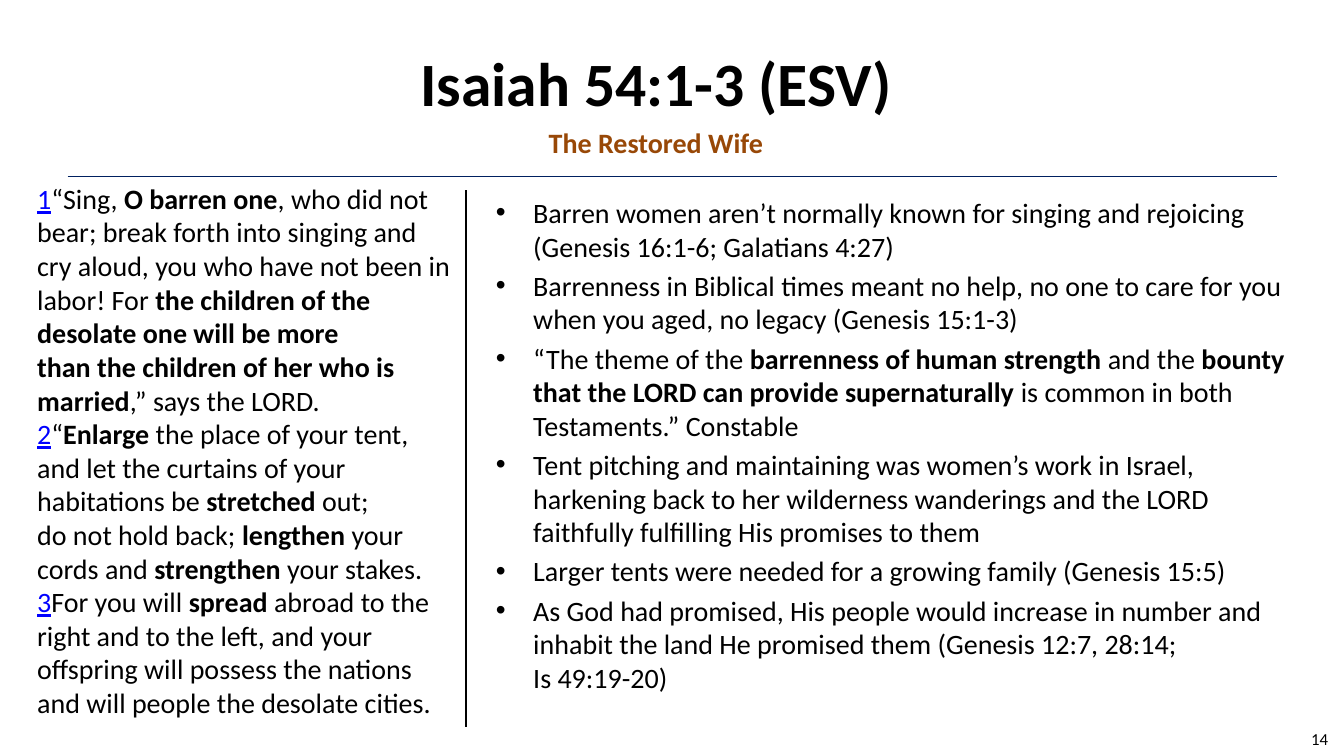
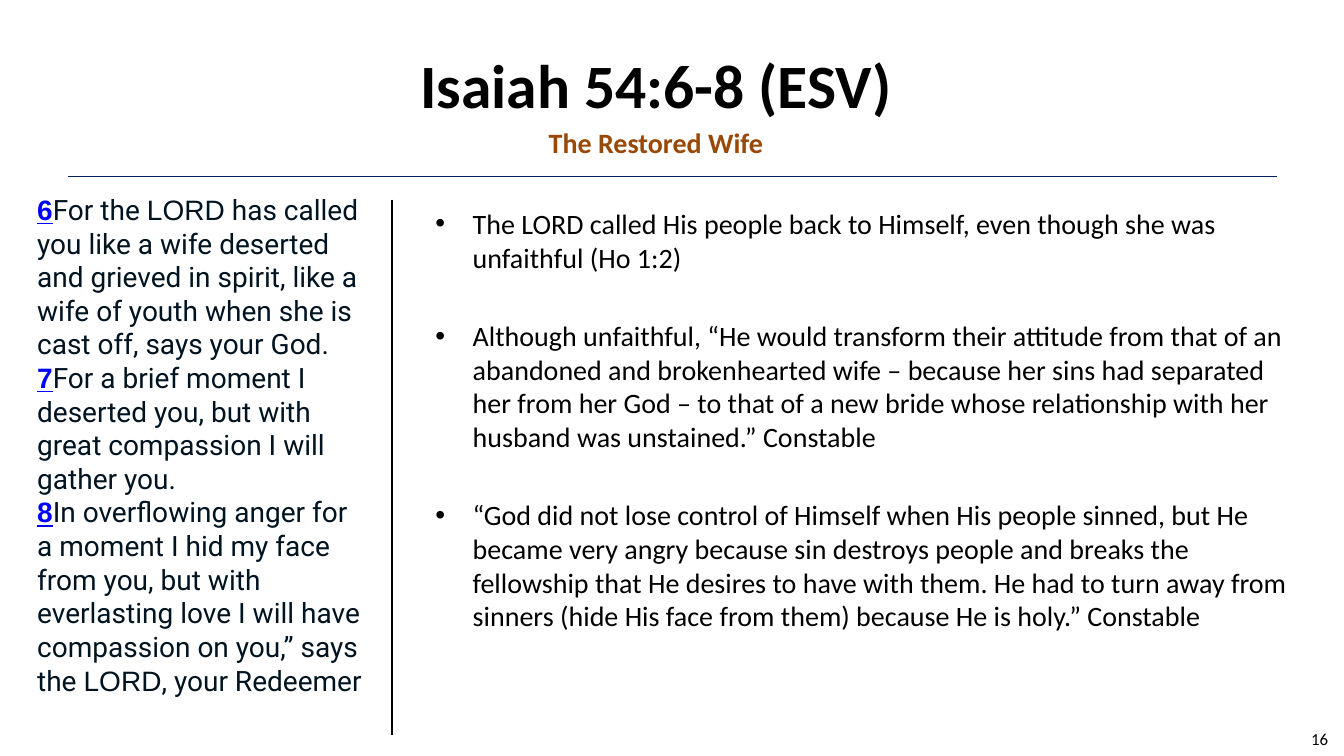
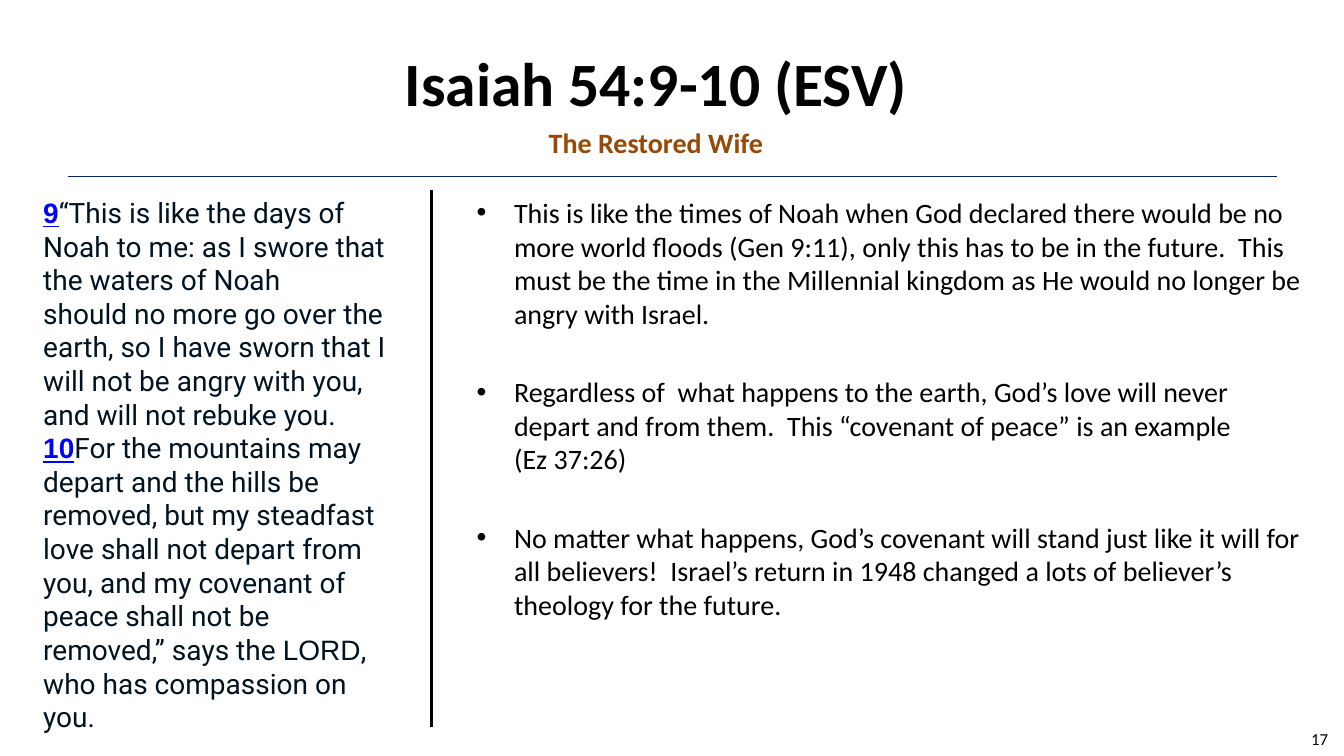
from dataclasses import dataclass
from typing import NamedTuple

from lxml.etree import SubElement
from pptx import Presentation
from pptx.dml.color import RGBColor
from pptx.enum.shapes import MSO_CONNECTOR as Link
from pptx.enum.text import MSO_ANCHOR as Anchor, MSO_AUTO_SIZE as Fit, PP_ALIGN as Align
from pptx.oxml.ns import qn
from pptx.util import Inches, Pt


# Theme
@dataclass(frozen=True)
class Look:
    font: str
    size: int
    color: str
    bold: bool = False
    under: bool = False


@dataclass(frozen=True)
class Theme:
    title: Look = Look("Calibri", 44, "000000", bold=True)
    sub: Look = Look("Calibri", 20, "984807", bold=True)
    text: Look = Look("Calibri", 20, "000000")
    strong: Look = Look("Calibri", 20, "000000", bold=True)
    mark: Look = Look("Calibri", 20, "0000FF", under=True)
    verse: Look = Look("Roboto", 20, "001320")
    name: Look = Look("Arial", 20, "001320")
    label: Look = Look("Arial", 20, "0000FF", bold=True, under=True)
    foot: Look = Look("Calibri", 12, "000000")
    rule: str = "002060"
    split: str = "000000"
    indent: float = 0.37


THEME = Theme()


# Content model
class Frame(NamedTuple):
    left: float
    top: float
    width: float
    height: float


class Verse(NamedTuple):
    num: str
    text: str  # asterisks enclose the accented words


class Voice(NamedTuple):
    num: Look
    text: Look
    accent: Look


class Line(NamedTuple):
    x1: float
    y1: float
    x2: float
    y2: float


@dataclass(frozen=True)
class Page:
    title: str
    top: float
    number: str
    voice: Voice
    verses: list[Verse]
    left: Frame
    split: Line
    points: list[str]
    right: Frame
    gap: int  # points between bullets


PLAIN = Voice(THEME.mark, THEME.text, THEME.strong)
WEB = Voice(THEME.label, THEME.verse, THEME.name)

PAGES = [
    Page(
        "Isaiah 54:1-3 (ESV)", 0.19, "14", PLAIN,
        [
            Verse("1", "“Sing, *O barren one*, who did not bear; break forth into singing and "
                  "cry aloud, you who have not been in labor! For *the children of the "
                  "desolate one will be more\nthan the children of her who is married*,” "
                  "says the LORD."),
            Verse("2", "“*Enlarge* the place of your tent,\nand let the curtains of your "
                  "habitations be *stretched* out;\ndo not hold back; *lengthen* your cords "
                  "and *strengthen* your stakes."),
            Verse("3", "For you will *spread* abroad to the right and to the left, and your "
                  "offspring will possess the nations and will people the desolate cities."),
        ],
        Frame(0.27, 1.75, 4.35, 5.69), Line(4.62, 1.89, 4.62, 7.21),
        [
            "Barren women aren’t normally known for singing and rejoicing "
            "(Genesis 16:1-6; Galatians 4:27)",
            "Barrenness in Biblical times meant no help, no one to care for you when you "
            "aged, no legacy (Genesis 15:1-3)",
            "“The theme of the *barrenness of human strength *and the *bounty that the LORD "
            "can provide supernaturally* is common in both Testaments.” Constable",
            "Tent pitching and maintaining was women’s work in Israel, harkening back to her "
            "wilderness wanderings and the LORD faithfully fulfilling His promises to them",
            "Larger tents were needed for a growing family (Genesis 15:5)",
            "As God had promised, His people would increase in number and inhabit the land "
            "He promised them (Genesis 12:7, 28:14;\nIs 49:19-20)",
        ],
        Frame(4.82, 1.89, 8.25, 5.54), 4,
    ),
    Page(
        "Isaiah 54:6-8 (ESV)", 0.21, "16", WEB,
        [
            Verse("6", "For the *LORD* has called you like a wife deserted and grieved in "
                  "spirit, like a wife of youth when she is cast off, says your God."),
            Verse("7", "For a brief moment I deserted you, but with great compassion I will "
                  "gather you."),
            Verse("8", "In overflowing anger for a moment I hid my face from you, but with "
                  "everlasting love I will have compassion on you,” says the *LORD*, your "
                  "Redeemer"),
        ],
        Frame(0.27, 1.86, 3.42, 5.58), Line(3.89, 1.98, 3.89, 7.29),
        [
            "The LORD called His people back to Himself, even though she was unfaithful "
            "(Ho 1:2)",
            "Although unfaithful, “He would transform their attitude from that of an "
            "abandoned and brokenhearted wife – because her sins had separated her from her "
            "God – to that of a new bride whose relationship with her husband was "
            "unstained.” Constable",
            "“God did not lose control of Himself when His people sinned, but He became very "
            "angry because sin destroys people and breaks the fellowship that He desires to "
            "have with them. He had to turn away from sinners (hide His face from them) "
            "because He is holy.” Constable",
        ],
        Frame(4.22, 2, 8.66, 5.29), 32,
    ),
    Page(
        "Isaiah 54:9-10 (ESV)", 0.19, "17", WEB,
        [
            Verse("9", "“This is like the days of Noah to me: as I swore that the waters of "
                  "Noah\nshould no more go over the earth, so I have sworn that I will not "
                  "be angry with you, and will not rebuke you."),
            Verse("10", "For the mountains may depart and the hills be removed, but my "
                  "steadfast love shall not depart from you, and my covenant of peace shall "
                  "not be removed,” says the *LORD*, who has compassion on you."),
        ],
        Frame(0.33, 1.89, 3.71, 5.54), Line(4.28, 1.89, 4.28, 7.21),
        [
            "This is like the times of Noah when God declared there would be no more world "
            "floods (Gen 9:11), only this has to be in the future.  This must be the time in "
            "the Millennial kingdom as He would no longer be angry with Israel.",
            "Regardless of  what happens to the earth, God’s love will never depart and from "
            "them.  This “covenant of peace” is an example\n(Ez 37:26)",
            "No matter what happens, God’s covenant will stand just like it will for all "
            "believers!  Israel’s return in 1948 changed a lots of believer’s theology for "
            "the future.",
        ],
        Frame(4.63, 1.89, 8.43, 5.54), 32,
    ),
]


# Text helpers
def style(run, look: Look) -> None:
    font = run.font
    font.name, font.size = look.font, Pt(look.size)
    font.bold, font.underline = look.bold, look.under
    font.color.rgb = RGBColor.from_string(look.color)


def write(par, text: str, look: Look) -> None:
    for i, part in enumerate(text.split("\n")):
        if i:
            par.add_line_break()
        if part:
            run = par.add_run()
            run.text = part
            style(run, look)


def accent(par, text: str, base: Look, other: Look) -> None:
    for i, part in enumerate(text.split("*")):
        write(par, part, other if i % 2 else base)


def bullet(par) -> None:
    props = par._p.get_or_add_pPr()
    props.set("marL", str(Inches(THEME.indent)))
    props.set("indent", str(-Inches(THEME.indent)))
    SubElement(props, qn("a:buFont")).set("typeface", "Arial")
    SubElement(props, qn("a:buChar")).set("char", "•")


# Drawing helpers
def place(shape, frame: Frame) -> None:
    shape.left, shape.top, shape.width, shape.height = map(Inches, frame)


def add_box(slide, frame: Frame):
    body = slide.shapes.add_textbox(*map(Inches, frame)).text_frame
    body.word_wrap = True
    return body


def label(body, text: str, look: Look, align: Align) -> None:
    body.text = text
    par = body.paragraphs[0]
    par.alignment = align
    style(par.runs[0], look)


def add_line(slide, line: Line, color: str, width: float) -> None:
    rule = slide.shapes.add_connector(Link.STRAIGHT, *map(Inches, line))
    rule.line.color.rgb = RGBColor.from_string(color)
    rule.line.width = Pt(width)
    SubElement(rule._element.spPr, qn("a:effectLst"))


# Slide parts
def add_frame(slide, page: Page) -> None:
    title = slide.shapes.title
    place(title, Frame(0.51, page.top, 12, 1.25))
    body = title.text_frame
    body.auto_size, body.vertical_anchor = Fit.NONE, Anchor.MIDDLE
    label(body, page.title, THEME.title, Align.CENTER)
    label(add_box(slide, Frame(5.14, 1.2, 2.73, 0.44)), "The Restored Wife",
          THEME.sub, Align.CENTER)
    foot = add_box(slide, Frame(12.27, 7.13, 1, 0.4))
    foot.vertical_anchor = Anchor.MIDDLE
    label(foot, page.number, THEME.foot, Align.RIGHT)
    add_line(slide, Line(0.67, 1.75, 12.67, 1.75), THEME.rule, 0.75)


def add_verses(slide, page: Page) -> None:
    par = add_box(slide, page.left).paragraphs[0]
    for i, verse in enumerate(page.verses):
        if i:
            par.add_line_break()
        write(par, verse.num, page.voice.num)
        accent(par, verse.text, page.voice.text, page.voice.accent)


def add_points(slide, page: Page) -> None:
    body = add_box(slide, page.right)
    for i, point in enumerate(page.points):
        par = body.add_paragraph() if i else body.paragraphs[0]
        bullet(par)
        if i:
            par.space_before = Pt(page.gap)
        accent(par, point, THEME.text, THEME.strong)


def main() -> None:
    deck = Presentation()
    deck.slide_width, deck.slide_height = Inches(13.33), Inches(7.5)
    layout = deck.slide_layouts.get_by_name("Title Only")
    for page in PAGES:
        slide = deck.slides.add_slide(layout)
        add_frame(slide, page)
        add_verses(slide, page)
        add_points(slide, page)
        add_line(slide, page.split, THEME.split, 1.5)
    deck.save("out.pptx")


if __name__ == "__main__":
    main()
